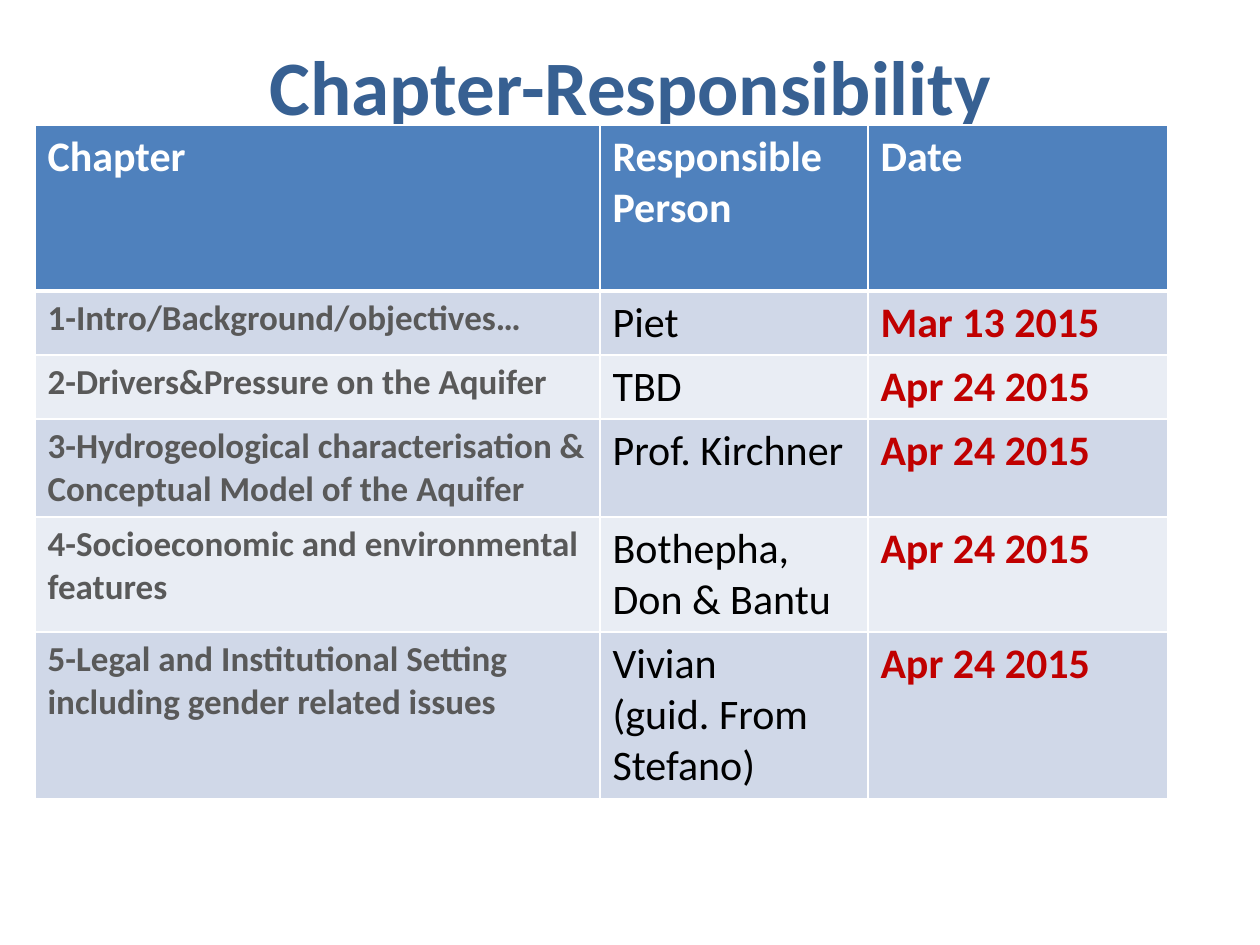
from dataclasses import dataclass

from lxml.etree import SubElement
from pptx import Presentation
from pptx.dml.color import RGBColor as RGB
from pptx.enum.text import MSO_ANCHOR as ANCHOR, PP_ALIGN as ALIGN
from pptx.oxml.ns import qn
from pptx.util import Pt

EMU_PER_PX = 914400 / 126
FONT = "Calibri"
COLORS = {
    "title": "376092",
    "header": "4F81BD",
    "odd": "D0D8E8",
    "even": "E9EDF4",
    "white": "FFFFFF",
    "chapter": "595959",
    "person": "000000",
    "date": "C00000",
}
COL_WIDTHS = (565, 268, 300)


@dataclass(frozen=True)
class Style:
    size: int
    color: str
    bold: bool = True


@dataclass(frozen=True)
class Row:
    height: int
    chapter: str
    person: tuple[str, ...]
    date: str


TITLE = Style(44, "title")
HEADING = Style(24, "white")
COLUMN_STYLES = (Style(20, "chapter"), Style(24, "person", False), Style(24, "date"))
ROWS = (
    Row(166, "Chapter", ("Responsible Person",), "Date"),
    Row(64, "1-Intro/Background/objectives…", ("Piet",), "Mar 13 2015"),
    Row(64, "2-Drivers&Pressure on the Aquifer", ("TBD",), "Apr 24 2015"),
    Row(98, "3-Hydrogeological characterisation & Conceptual Model of the Aquifer",
        ("Prof. Kirchner",), "Apr 24 2015"),
    Row(115, "4-Socioeconomic and environmental features",
        ("Bothepha, Don & Bantu",), "Apr 24 2015"),
    Row(167, "5-Legal and Institutional Setting including gender related issues",
        ("Vivian", "(guid. From Stefano)"), "Apr 24 2015"),
)


def px(n: int) -> int:
    return round(n * EMU_PER_PX)


def write(tf, lines: tuple[str, ...], style: Style, align=ALIGN.LEFT) -> None:
    for i, line in enumerate(lines):
        p = tf.paragraphs[0] if i == 0 else tf.add_paragraph()
        p.alignment = align
        r = p.add_run()
        r.text = line
        r.font.name = FONT
        r.font.size = Pt(style.size)
        r.font.bold = style.bold
        r.font.color.rgb = RGB.from_string(COLORS[style.color])


def set_borders(cell, top: int, bottom: int) -> None:
    tc_pr = cell._tc.get_or_add_tcPr()
    for side, width in (("L", 1), ("R", 1), ("T", top), ("B", bottom)):
        ln = SubElement(tc_pr, qn(f"a:ln{side}"), w=str(Pt(width)))
        fill = SubElement(ln, qn("a:solidFill"))
        SubElement(fill, qn("a:srgbClr"), val=COLORS["white"])


def add_title(s, text: str) -> None:
    tf = s.shapes.add_textbox(px(64), px(16), px(1134), px(137)).text_frame
    tf.word_wrap = True
    tf.vertical_anchor = ANCHOR.MIDDLE
    write(tf, (text,), TITLE, ALIGN.CENTER)


def add_schedule(s, rows: tuple[Row, ...]) -> None:
    height = sum(row.height for row in rows)
    table = s.shapes.add_table(len(rows), len(COL_WIDTHS), px(35), px(125),
                               px(sum(COL_WIDTHS)), px(height)).table
    for col, width in zip(table.columns, COL_WIDTHS):
        col.width = px(width)
    for i, row in enumerate(rows):
        table.rows[i].height = px(row.height)
        band = "header" if i == 0 else "odd" if i % 2 else "even"
        texts = ((row.chapter,), row.person, (row.date,))
        for j, lines in enumerate(texts):
            cell = table.cell(i, j)
            set_borders(cell, 3 if i == 1 else 1, 3 if i == 0 else 1)
            cell.fill.solid()
            cell.fill.fore_color.rgb = RGB.from_string(COLORS[band])
            write(cell.text_frame, lines, HEADING if i == 0 else COLUMN_STYLES[j])


def main() -> None:
    prs = Presentation()
    prs.slide_width, prs.slide_height = px(1260), px(945)
    s = prs.slides.add_slide(prs.slide_layouts[6])
    add_title(s, "Chapter-Responsibility")
    add_schedule(s, ROWS)
    prs.save("out.pptx")


if __name__ == "__main__":
    main()
